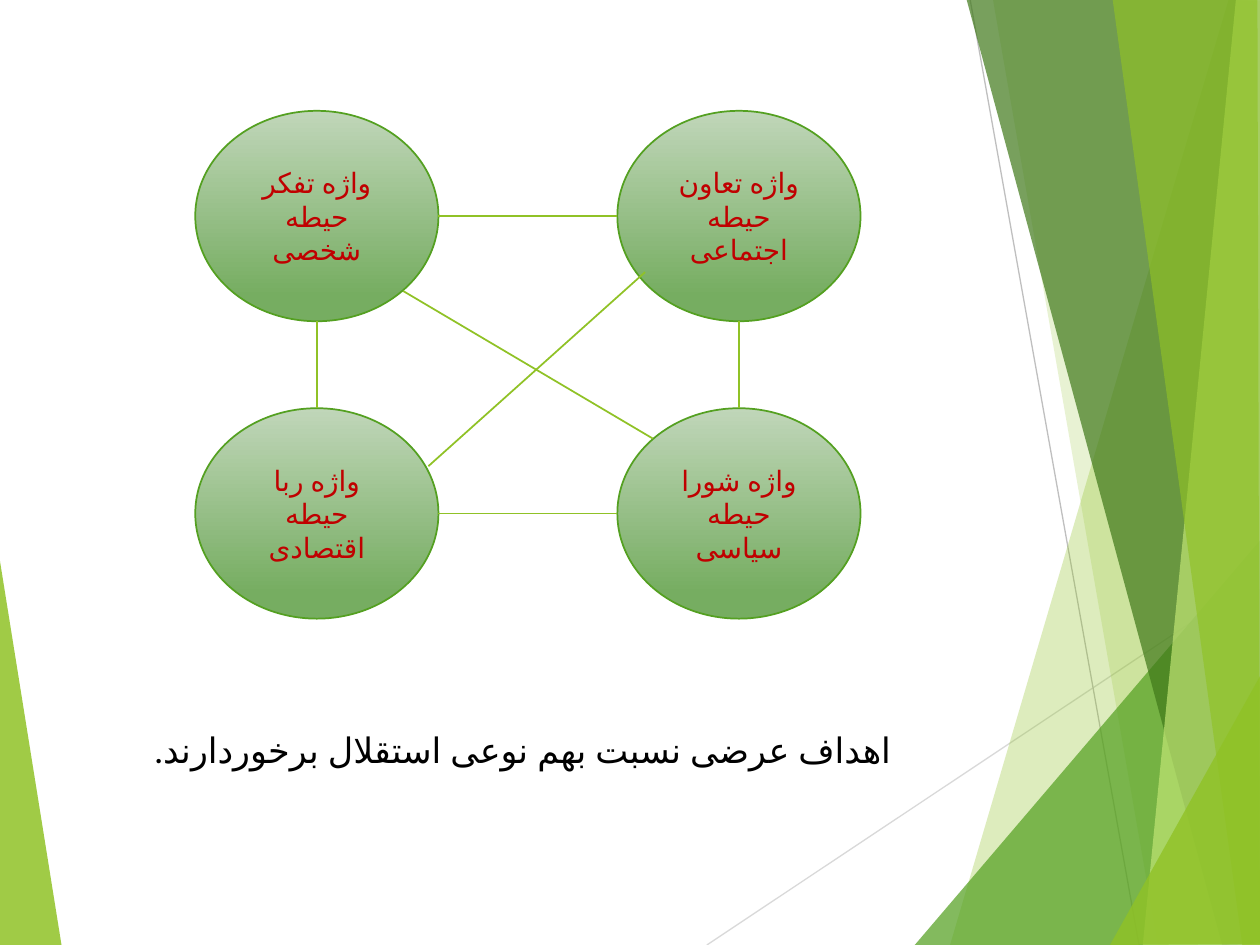
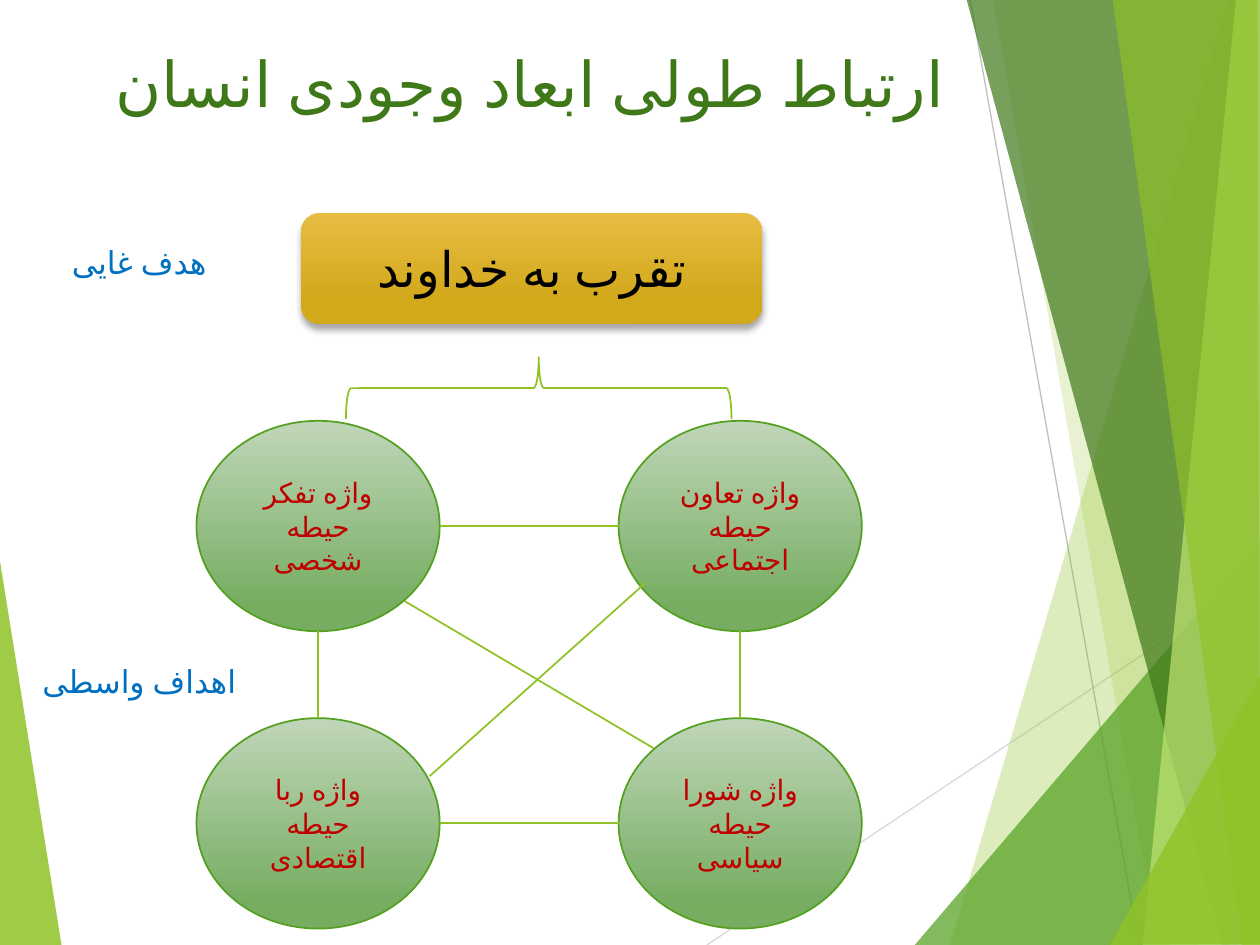
from lxml.etree import SubElement
from pptx import Presentation
from pptx.dml.color import RGBColor
from pptx.enum.lang import MSO_LANGUAGE_ID
from pptx.enum.shapes import MSO_CONNECTOR, MSO_SHAPE
from pptx.enum.text import MSO_ANCHOR, PP_ALIGN
from pptx.oxml.ns import qn
from pptx.util import Inches, Pt

FONT = "Lato"
LIME, GREEN, DARK_GREEN, PALE_LIME = "90C226", "54A021", "3F7819", "C0E474"
RED, BLUE, BLACK = "C00000", "0070C0", "000000"
GOAL_GRADIENT = [(0, "E7BC43"), (0.78, "D2A91B")]
WORD_GRADIENT = [(0, "C0D6B9"), (0.88, "76AD61")]

# Facets of the backdrop: colour, opacity in percent, corners in inches
LEFT_FACET = (LIME, 85, [(-0.01, 4.39), (0.49, 7.51), (-0.01, 7.5)])
RIGHT_FACETS = [
    (LIME, 30, [(9.75, 0), (7.54, 7.5), (10.02, 7.51), (10.01, 0.01)]),
    (LIME, 20, [(7.88, -0.01), (9.19, 7.5), (10.01, 7.5), (10.01, -0.01)]),
    (GREEN, 72, [(7.26, 7.5), (10, 4.29), (10.01, 7.5)]),
    (DARK_GREEN, 70, [(7.67, -0.01), (9.7, 7.5), (10.01, 7.49), (10.01, -0.01)]),
    (PALE_LIME, 70, [(9.81, -0.01), (9.07, 7.5), (10.01, 7.5), (10, -0.01)]),
    (LIME, 65, [(8.83, -0.01), (9.86, 7.5), (10, 7.5), (9.98, -0.01)]),
    (LIME, 80, [(8.81, 7.5), (10.01, 5.35), (10.01, 7.49)]),
]

# Words and their domains by column and row of the web
WORDS = {
    (0, 0): ("واژه تفکر", "حیطه شخصی"),
    (0, 1): ("واژه ربا", "حیطه اقتصادی"),
    (1, 0): ("واژه تعاون", "حیطه اجتماعی"),
    (1, 1): ("واژه شورا", "حیطه سیاسی"),
}
WORD_W, WORD_H = 1.93, 1.67
COLUMN_STEP, ROW_STEP = 3.35, 2.36


def rgb(color):
    return RGBColor.from_string(color)


def inches(*lengths):
    return [Inches(length) for length in lengths]


def add_line(slide, start, end, color=LIME, width=1):
    line = slide.shapes.add_connector(MSO_CONNECTOR.STRAIGHT, *inches(*start, *end))
    line.line.color.rgb = rgb(color)
    line.line.width = Pt(width)
    SubElement(line._element.spPr, qn("a:effectLst"))


def add_facet(slide, color, opacity, corners):
    first, *rest = [inches(*corner) for corner in corners]
    builder = slide.shapes.build_freeform(*first)
    builder.add_line_segments(rest)
    facet = builder.convert_to_shape()
    facet.shadow.inherit = False
    facet.line.fill.background()
    facet.fill.solid()
    facet.fill.fore_color.rgb = rgb(color)
    tint = facet._element.spPr.find(qn("a:solidFill"))[0]
    SubElement(tint, qn("a:alpha"), val=str(opacity * 1000))


def add_backdrop(slide):
    add_facet(slide, *LEFT_FACET)
    add_line(slide, (5.61, 7.5), (10.01, 4.57), "D9D9D9", 0.75)
    add_line(slide, (7.7, 0), (9.04, 7.5), "BFBFBF", 0.75)
    for facet in RIGHT_FACETS:
        add_facet(slide, *facet)


def write(shape, lines, size, color):
    """Centred right-to-left paragraphs, one for each line."""
    frame = shape.text_frame
    frame.word_wrap = True
    frame.text = "\n".join(lines)
    for paragraph in frame.paragraphs:
        paragraph.alignment = PP_ALIGN.CENTER
        paragraph._p.get_or_add_pPr().set("rtl", "1")
        for run in paragraph.runs:
            run.font.name = FONT
            run.font.size = Pt(size)
            run.font.color.rgb = rgb(color)
            run.font.language_id = MSO_LANGUAGE_ID.FARSI
            # Persian letters take the complex-script font
            SubElement(run._r.get_or_add_rPr(), qn("a:cs"), typeface=FONT)
    return frame


def add_label(slide, box, lines, size, color):
    return write(slide.shapes.add_textbox(*inches(*box)), lines, size, color)


def add_gradient_shape(slide, preset, box, gradient, lines, size, color):
    shape = slide.shapes.add_shape(preset, *inches(*box))
    shape.shadow.inherit = False
    shape.line.fill.background()
    shape.fill.gradient()
    shape.fill.gradient_angle = 270
    for stop, (position, stop_color) in zip(shape.fill.gradient_stops, gradient):
        stop.position = position
        stop.color.rgb = rgb(stop_color)
    write(shape, lines, size, color).vertical_anchor = MSO_ANCHOR.MIDDLE
    return shape


def add_word_web(slide, left, top):
    """Four linked words, placed from the web's top left corner."""
    for (column, row), lines in WORDS.items():
        box = (left + column * COLUMN_STEP, top + row * ROW_STEP, WORD_W, WORD_H)
        word = add_gradient_shape(slide, MSO_SHAPE.OVAL, box, WORD_GRADIENT, lines, 16, RED)
        word.line.color.rgb = rgb(GREEN)
        word.line.width = Pt(1)

    links = []
    for i in range(2):
        middle_y = WORD_H / 2 + i * ROW_STEP
        middle_x = WORD_W / 2 + i * COLUMN_STEP
        links.append(((WORD_W, middle_y), (COLUMN_STEP, middle_y)))
        links.append(((middle_x, WORD_H), (middle_x, ROW_STEP)))
    links.append(((3.57, 1.28), (1.85, 2.82)))
    links.append(((1.65, 1.43), (3.63, 2.6)))
    for link in links:
        add_line(slide, *[(left + x, top + y) for x, y in link])


def add_goal(slide, left, top):
    """The final goal, with the brace that joins it to the web below."""
    brace = slide.shapes.add_shape(
        MSO_SHAPE.LEFT_BRACE, *inches(left + 1.64, top - 0.14, 0.49, 3.06))
    brace.rotation = 90
    brace.shadow.inherit = False
    brace.fill.background()
    brace.line.color.rgb = rgb(LIME)
    brace.line.width = Pt(1)

    goal = add_gradient_shape(
        slide, MSO_SHAPE.FLOWCHART_ALTERNATE_PROCESS, (left, top, 3.66, 0.88),
        GOAL_GRADIENT, ["تقرب به خداوند"], 28, BLACK)
    effects = goal._element.spPr.find(qn("a:effectLst"))
    shadow = SubElement(effects, qn("a:outerShdw"), blurRad=str(Pt(4)), dist=str(Pt(3)),
                        dir="5400000", rotWithShape="0")
    shade = SubElement(shadow, qn("a:srgbClr"), val=BLACK)
    SubElement(shade, qn("a:alpha"), val="35000")


def build_breadth_slide(slide):
    add_backdrop(slide)
    add_word_web(slide, 1.55, 0.88)
    add_label(slide, (0.91, 5.73, 6.48, 0.44),
              ["اهداف عرضی نسبت بهم نوعی استقلال برخوردارند."], 20, BLACK)


def build_depth_slide(slide):
    add_backdrop(slide)
    add_label(slide, (0.77, 0.3, 6.87, 0.71),
              ["ارتباط طولی ابعاد وجودی انسان"], 36, DARK_GREEN)
    add_word_web(slide, 1.56, 3.34)
    add_goal(slide, 2.39, 1.69)
    goal_levels = add_label(slide, (0.13, 1.88, 1.95, 3.74),
                            ["هدف غایی", "اهداف واسطی"], 18, BLUE)
    goal_levels.paragraphs[1].space_before = Pt(218)


def main():
    deck = Presentation()
    deck.slide_width, deck.slide_height = inches(10, 7.5)
    for build in (build_breadth_slide, build_depth_slide):
        build(deck.slides.add_slide(deck.slide_layouts[6]))
    deck.save("out.pptx")


if __name__ == "__main__":
    main()
